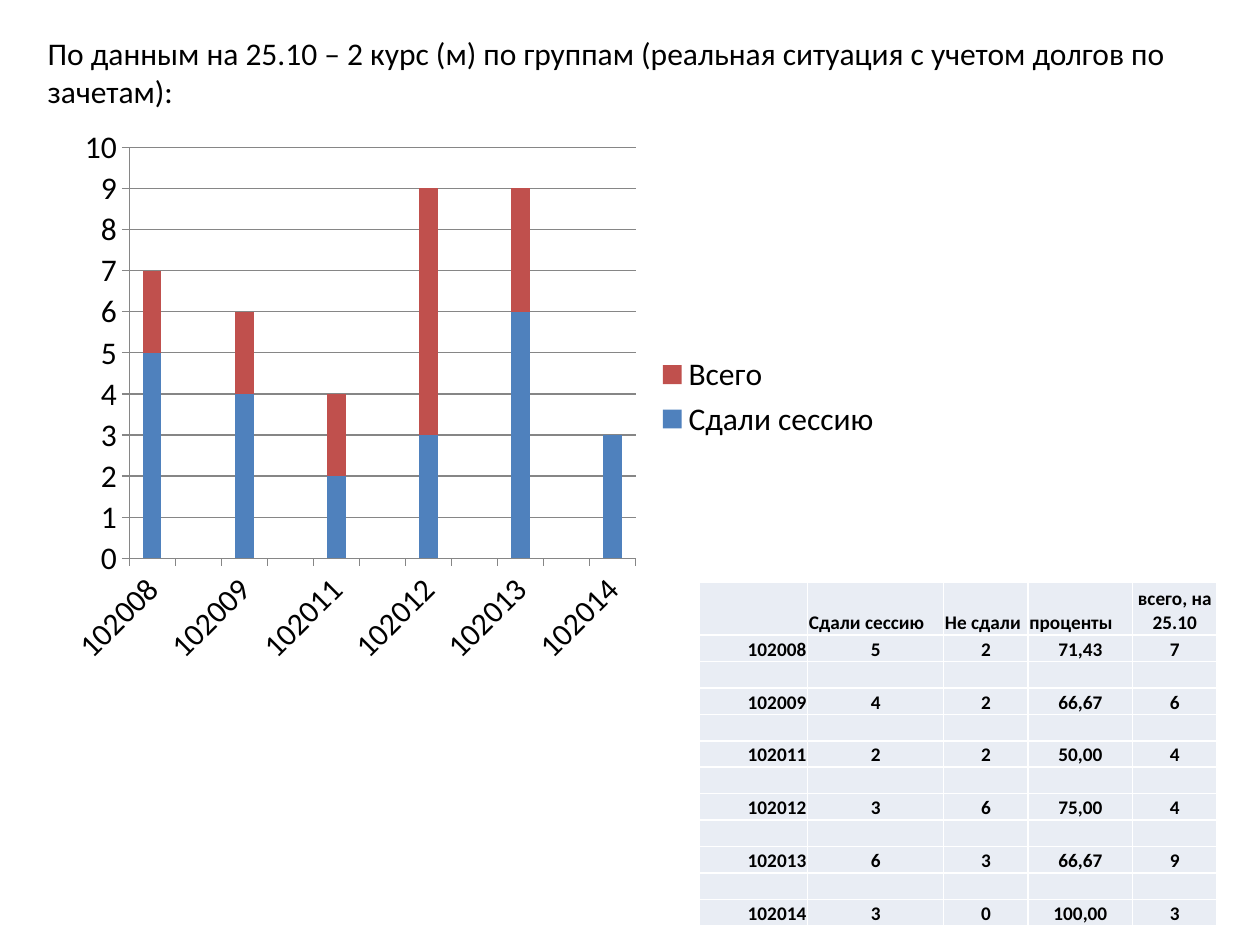
"""Build the slide with session results by group: a stacked chart and a table."""
from lxml import etree
from pptx import Presentation
from pptx.chart.data import CategoryChartData
from pptx.dml.color import RGBColor
from pptx.enum.chart import XL_CHART_TYPE, XL_LEGEND_POSITION, XL_TICK_MARK
from pptx.enum.text import MSO_ANCHOR, MSO_AUTO_SIZE, PP_ALIGN
from pptx.oxml.ns import qn
from pptx.util import Inches, Pt

STACKED = XL_CHART_TYPE.COLUMN_STACKED
LEGEND_RIGHT = XL_LEGEND_POSITION.RIGHT
TICK_OUT = XL_TICK_MARK.OUTSIDE
BOTTOM = MSO_ANCHOR.BOTTOM
GROW = MSO_AUTO_SIZE.SHAPE_TO_FIT_TEXT
LEFT, CENTER, RIGHT = PP_ALIGN.LEFT, PP_ALIGN.CENTER, PP_ALIGN.RIGHT

BLACK = RGBColor(0x00, 0x00, 0x00)
WHITE = RGBColor(0xFF, 0xFF, 0xFF)
PALE = RGBColor(0xE9, 0xED, 0xF4)
GRAY = RGBColor(0x86, 0x86, 0x86)
BLUE = RGBColor(0x4F, 0x81, 0xBD)
RED = RGBColor(0xC0, 0x50, 0x4D)

HEADING = ("По данным на 25.10 – 2 курс (м) по группам "
           "(реальная ситуация с учетом долгов по зачетам):")
HEADER = ["", "Сдали сессию", "Не сдали", "проценты", "всего, на 25.10"]
GROUPS = [
    ("102008", 5, 2, "71,43", 7),
    ("102009", 4, 2, "66,67", 6),
    ("102011", 2, 2, "50,00", 4),
    ("102012", 3, 6, "75,00", 4),
    ("102013", 6, 3, "66,67", 9),
    ("102014", 3, 0, "100,00", 3),
]
COLUMN_WIDTHS = [0.86, 1.08, 0.67, 0.83, 0.67]


def spaced(items, gap):
    """Return the items with a gap value between neighbours."""
    return [value for item in items for value in (item, gap)][:-1]


def write(frame, text, font="Calibri", size=18, color=BLACK, bold=False, align=LEFT):
    """Write one formatted paragraph into a text frame."""
    paragraph = frame.paragraphs[0]
    paragraph.alignment = align
    if not text:
        etree.SubElement(paragraph._p, qn("a:endParaRPr"), sz=str(size * 100))
        return
    run = paragraph.add_run()
    run.text = text
    run.font.name = font
    run.font.size = Pt(size)
    run.font.bold = bold
    run.font.color.rgb = color


class SlideBuilder:
    """Hold the style and the current slide."""

    def __init__(self, slide, font="Calibri", size=18, cell_size=11):
        self.slide = slide
        self.font = font
        self.size = size
        self.cell_size = cell_size

    def text(self, text, left, top, width, height):
        """Add a wrapping text box."""
        frame = self.slide.shapes.add_textbox(
            Inches(left), Inches(top), Inches(width), Inches(height)).text_frame
        frame.word_wrap = True
        frame.auto_size = GROW
        write(frame, text, font=self.font, size=self.size)

    def chart(self, categories, series, left, top, width, height):
        """Add a stacked column chart; series holds (name, values, color)."""
        data = CategoryChartData(number_format="General")
        data.categories = categories
        for name, values, _ in series:
            data.add_series(name, values)
        chart = self.slide.shapes.add_chart(
            STACKED, Inches(left), Inches(top), Inches(width), Inches(height), data).chart
        chart.has_title = False
        chart.font.name = self.font
        chart.font.size = Pt(self.size)
        chart.font.color.rgb = BLACK
        chart.has_legend = True
        chart.legend.position = LEGEND_RIGHT
        chart.legend.include_in_layout = False
        plot = chart.plots[0]
        plot.gap_width, plot.overlap = 150, 100
        plot.vary_by_categories = False
        for bars, (_, _, color) in zip(plot.series, series):
            bars.format.fill.solid()
            bars.format.fill.fore_color.rgb = color
        group_axis, count_axis = chart.category_axis, chart.value_axis
        count_axis.minimum_scale, count_axis.maximum_scale = 0, 10
        count_axis.major_unit = 1
        count_axis.has_major_gridlines = True
        for axis in (group_axis, count_axis):
            axis.major_tick_mark = TICK_OUT
            axis.tick_labels.font.size = Pt(self.size)
        for part in (group_axis, count_axis, count_axis.major_gridlines):
            part.format.line.color.rgb = GRAY
            part.format.line.width = Pt(0.75)
        group_axis._element.find(".//" + qn("a:bodyPr")).set("rot", str(-45 * 60000))

    def cell(self, cell, text, align):
        """Fill, border and write one table cell."""
        cell.margin_left = cell.margin_top = cell.margin_right = Inches(0.01)
        cell.margin_bottom = 0
        cell.vertical_anchor = BOTTOM
        properties = cell._tc.get_or_add_tcPr()
        for side in ("lnL", "lnR", "lnT", "lnB"):
            border = etree.SubElement(properties, qn("a:" + side), w=str(Pt(1)))
            fill = etree.SubElement(border, qn("a:solidFill"))
            etree.SubElement(fill, qn("a:srgbClr"), val=str(WHITE))
        cell.fill.solid()
        cell.fill.fore_color.rgb = PALE
        write(cell.text_frame, text, font=self.font, size=self.cell_size,
              bold=True, align=align)

    def table(self, rows, header_aligns, body_aligns, widths, left, top,
              header_height, row_height):
        """Add a table whose first row is the header."""
        height = header_height + row_height * (len(rows) - 1)
        table = self.slide.shapes.add_table(
            len(rows), len(widths), Inches(left), Inches(top),
            Inches(sum(widths)), Inches(height)).table
        table.first_row = table.horz_banding = False
        for column, width in zip(table.columns, widths):
            column.width = Inches(width)
        for index, values in enumerate(rows):
            table.rows[index].height = Inches(row_height if index else header_height)
            aligns = body_aligns if index else header_aligns
            for column, (value, align) in enumerate(zip(values, aligns)):
                self.cell(table.cell(index, column), str(value), align)


def main():
    """Build and save the slide."""
    deck = Presentation()
    deck.slide_width, deck.slide_height = Inches(10), Inches(7.5)
    builder = SlideBuilder(deck.slides.add_slide(deck.slide_layouts[6]))
    names, passed, failed, _, _ = zip(*GROUPS)
    builder.chart(
        spaced(names, ""),
        [("Сдали сессию", spaced(passed, None), BLUE),
         ("Всего", spaced(failed, None), RED)],
        0.43, 0.93, 6.67, 4.44)
    builder.text(HEADING, 0.28, 0.22, 9.72, 0.71)
    builder.table(
        [HEADER] + spaced(GROUPS, [""] * len(HEADER)),
        [LEFT] * 4 + [CENTER], [RIGHT] + [CENTER] * 4,
        COLUMN_WIDTHS, 5.55, 4.62, 0.42, 0.21)
    deck.save("out.pptx")


if __name__ == "__main__":
    main()
